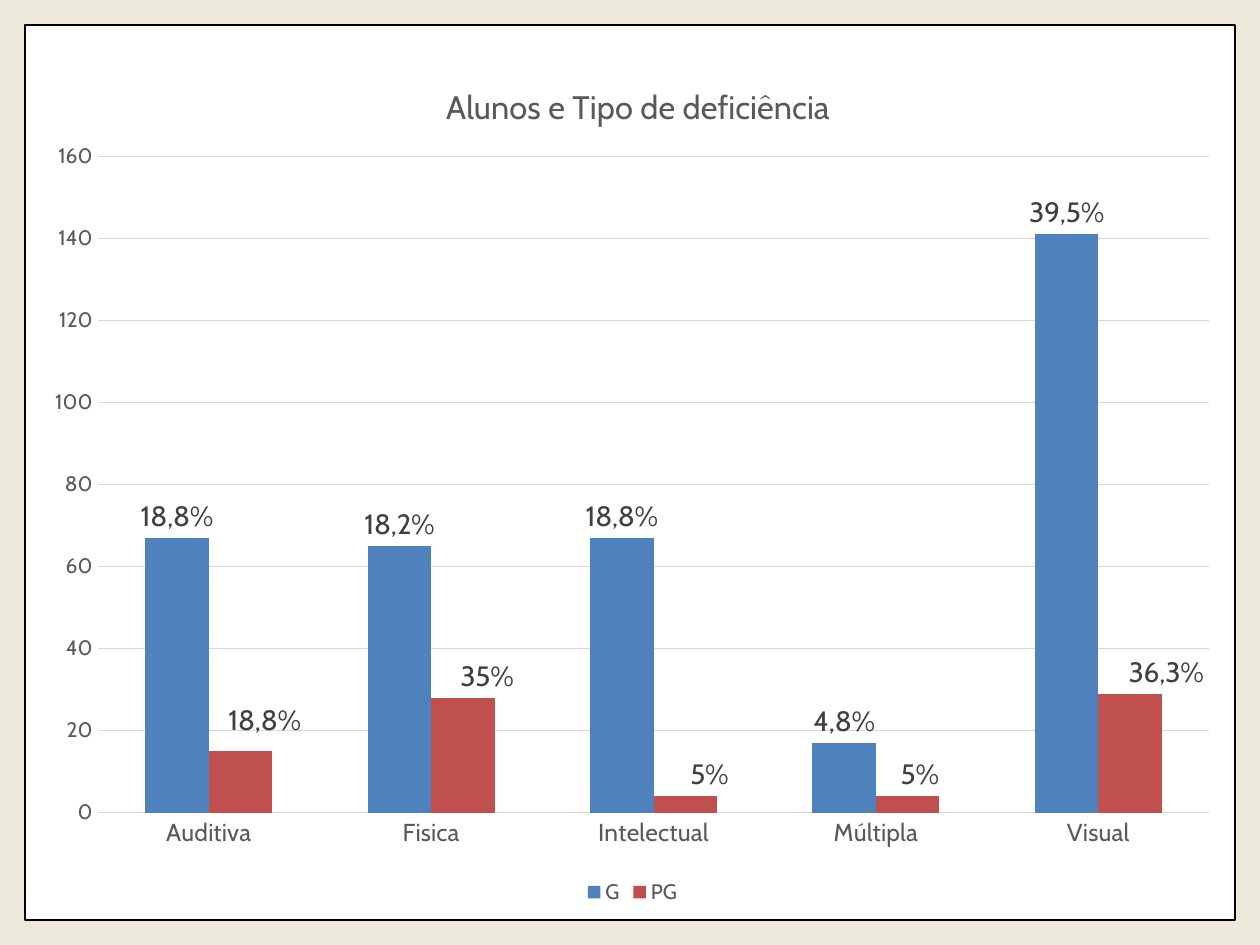
from lxml.etree import SubElement
from pptx import Presentation
from pptx.chart.data import CategoryChartData
from pptx.dml.color import RGBColor
from pptx.enum.chart import XL_CHART_TYPE, XL_LABEL_POSITION, XL_LEGEND_POSITION, XL_TICK_MARK
from pptx.enum.shapes import MSO_SHAPE
from pptx.oxml.ns import qn
from pptx.util import Pt

FONT = "Cabin"
COLORS = {
    "background": "ECE9DB", "panel": "FFFFFF", "border": "000000",
    "text": "595959", "label": "404040", "grid": "D9D9D9",
    "G": "4F81BD", "PG": "C0504D",
}
CATEGORIES = ["Auditiva", "Fisica", "Intelectual", "Múltipla", "Visual"]
VALUES = {"G": [67, 65, 67, 17, 141], "PG": [15, 28, 4, 4, 29]}
LABELS = {
    "G": ["18,8%", "18,2%", "18,8%", "4,8%", "39,5%"],
    "PG": ["18,8%", "35%", "5%", "5%", "36,3%"],
}
# Label shifts as fractions of the chart's width and height
SHIFTS = {"PG": [(0.02, -0.01), (0.02, 0), (0.02, 0), (0.01, 0), (0.03, 0)]}


def color(name):
    return RGBColor.from_string(COLORS[name])


def style_font(font, size, color_name):
    font.name = FONT
    font.size = Pt(size)
    font.bold = False
    font.color.rgb = color(color_name)


def make_layout(parent, **settings):
    """Return a manual layout element with the given settings."""
    layout = SubElement(parent, qn("c:layout"))
    manual = SubElement(layout, qn("c:manualLayout"))
    for tag, value in settings.items():
        SubElement(manual, qn(f"c:{tag}")).set("val", str(value))
    return layout


def add_panel(slide, left, top, width, height):
    panel = slide.shapes.add_shape(
        MSO_SHAPE.RECTANGLE, Pt(left), Pt(top), Pt(width), Pt(height))
    panel.shadow.inherit = False
    panel.fill.solid()
    panel.fill.fore_color.rgb = color("panel")
    panel.line.color.rgb = color("border")
    panel.line.width = Pt(1)


def style_title(chart):
    chart.has_title = True
    title = chart.chart_title
    title.include_in_layout = False
    title.text_frame.text = "Alunos e Tipo de deficiência"
    style_font(title.text_frame.paragraphs[0].runs[0].font, 18.6, "text")
    element = title._element
    for old_layout in element.findall(qn("c:layout")):
        element.remove(old_layout)
    layout = make_layout(element, xMode="edge", yMode="edge", x=0.34, y=0.04)
    element.find(qn("c:tx")).addnext(layout)


def style_axes(chart):
    for axis, size in ((chart.category_axis, 14), (chart.value_axis, 12)):
        axis.major_tick_mark = XL_TICK_MARK.NONE
        axis.minor_tick_mark = XL_TICK_MARK.NONE
        axis.format.line.fill.background()
        style_font(axis.tick_labels.font, size, "text")
    value_axis = chart.value_axis
    value_axis.minimum_scale = 0
    value_axis.maximum_scale = 160
    value_axis.major_unit = 20
    value_axis.has_major_gridlines = True
    grid_line = value_axis.major_gridlines.format.line
    grid_line.color.rgb = color("grid")
    grid_line.width = Pt(0.75)


def style_series(series):
    series.format.fill.solid()
    series.format.fill.fore_color.rgb = color(series.name)
    series.invert_if_negative = False
    labels = series.data_labels
    labels.show_value = True
    labels.position = XL_LABEL_POSITION.OUTSIDE_END
    style_font(labels.font, 16, "label")
    for index, text in enumerate(LABELS[series.name]):
        label = series.points[index].data_label
        label.text_frame.text = text
        style_font(label.text_frame.paragraphs[0].runs[0].font, 16, "label")
        label.position = XL_LABEL_POSITION.OUTSIDE_END
        if series.name in SHIFTS:
            x, y = SHIFTS[series.name][index]
            element = labels._element.findall(qn("c:dLbl"))[index]
            layout = make_layout(element, x=x, y=y)
            element.find(qn("c:idx")).addnext(layout)


def add_student_chart(slide, left, top, width, height):
    data = CategoryChartData()
    data.categories = CATEGORIES
    for name, values in VALUES.items():
        data.add_series(name, values)
    chart = slide.shapes.add_chart(
        XL_CHART_TYPE.COLUMN_CLUSTERED,
        Pt(left), Pt(top), Pt(width), Pt(height), data).chart
    chart.font.name = FONT
    chart.font.size = Pt(10)
    style_title(chart)
    style_axes(chart)

    # Columns and their labels
    plot = chart.plots[0]
    plot.gap_width = 150
    plot.overlap = 0
    plot.vary_by_categories = False
    for series in plot.series:
        style_series(series)

    # Inner plot area
    plot_area = chart._chartSpace.chart.plotArea
    for old_layout in plot_area.findall(qn("c:layout")):
        plot_area.remove(old_layout)
    layout = make_layout(plot_area, layoutTarget="inner", xMode="edge",
                         yMode="edge", x=0.055, y=0.13, w=0.925, h=0.758)
    plot_area.insert(0, layout)

    # Legend
    chart.has_legend = True
    chart.legend.position = XL_LEGEND_POSITION.BOTTOM
    chart.legend.include_in_layout = False
    style_font(chart.legend.font, 12, "text")


def main():
    presentation = Presentation()
    presentation.slide_width = Pt(720)
    presentation.slide_height = Pt(540)
    slide = presentation.slides.add_slide(presentation.slide_layouts[6])
    slide.background.fill.solid()
    slide.background.fill.fore_color.rgb = color("background")
    add_panel(slide, 14.4, 14.4, 691.2, 511.2)
    add_student_chart(slide, 18, 25.2, 686.9, 494.6)
    presentation.save("out.pptx")


if __name__ == "__main__":
    main()
